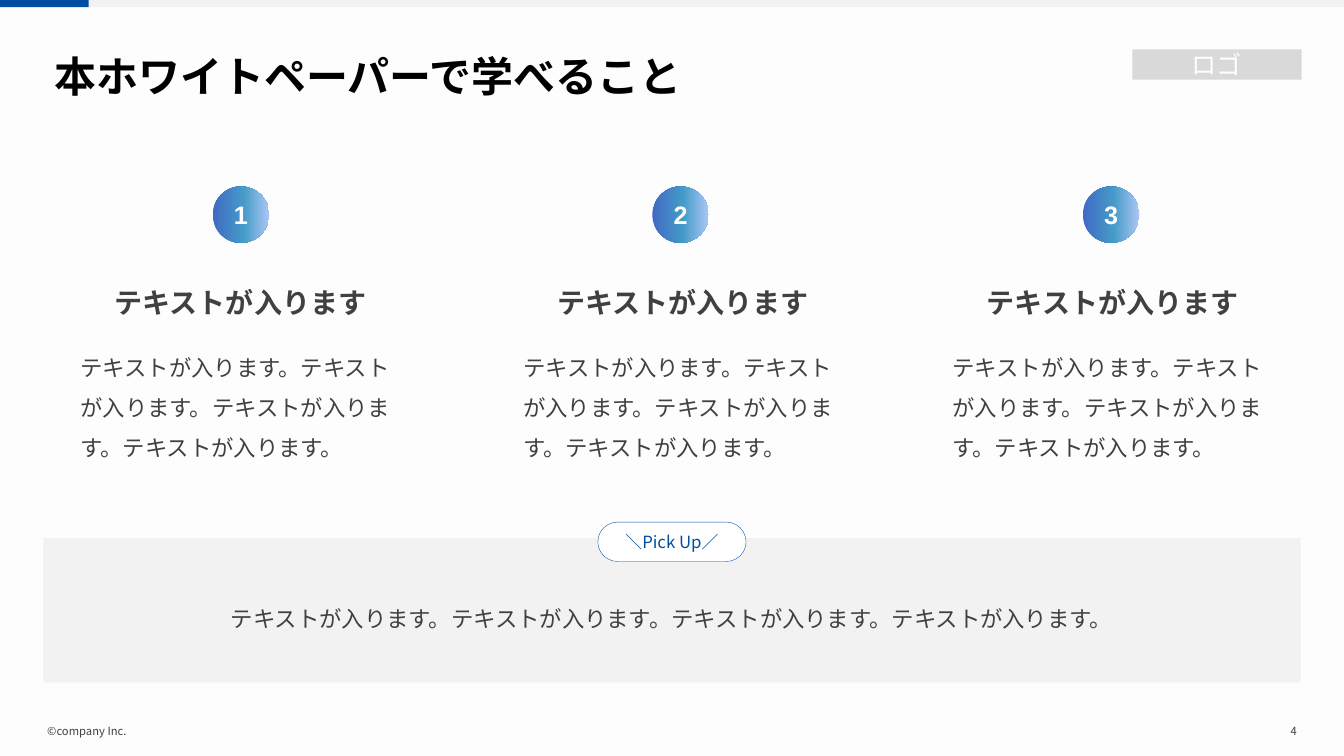
from dataclasses import dataclass
from typing import Any

import lxml.etree
import pptx
import pptx.dml.color
import pptx.enum.shapes
import pptx.enum.text
import pptx.oxml.ns
import pptx.util

Inches = pptx.util.Inches
Shape = pptx.enum.shapes.MSO_SHAPE
Align = pptx.enum.text.PP_ALIGN
Anchor = pptx.enum.text.MSO_ANCHOR
AutoSize = pptx.enum.text.MSO_AUTO_SIZE
qn = pptx.oxml.ns.qn

COLORS = {
    "white": "FFFFFF",
    "veil": "ECECEC",
    "panel": "F2F2F2",
    "logo": "D9D9D9",
    "accent": "004EA2",
    "text": "404040",
    "title": "000000",
}
BADGE_GRADIENT = {0: "406AC4", 55: "459BC8", 100: "ABC6F5"}
JAPANESE_FONT = "Noto Sans CJK JP"
SENTENCE = "テキストが入ります。"


@dataclass(frozen=True)
class Box:
    left: float
    top: float
    width: float
    height: float

    def lengths(self) -> list[int]:
        return [Inches(v) for v in (self.left, self.top, self.width, self.height)]


@dataclass(frozen=True)
class TextStyle:
    size: float
    color: str = "text"
    bold: bool = False
    font: str = JAPANESE_FONT
    align: Any = Align.LEFT
    anchor: Any = Anchor.TOP
    spacing: float = 1.0
    auto_size: Any = AutoSize.NONE


@dataclass(frozen=True)
class Lesson:
    number: str
    badge_left: float
    text_left: float
    heading: str = "テキストが入ります"
    body: str = SENTENCE * 4


TITLE = TextStyle(30, "title", True, anchor=Anchor.MIDDLE, spacing=0.9)
FOOTER = TextStyle(8, anchor=Anchor.MIDDLE)
PAGE_NUMBER = TextStyle(8, align=Align.RIGHT, anchor=Anchor.MIDDLE)
LOGO = TextStyle(18, "white", align=Align.CENTER, anchor=Anchor.MIDDLE)
BADGE = TextStyle(18, "white", True, "Arial", Align.CENTER, Anchor.MIDDLE)
HEADING = TextStyle(20, bold=True, align=Align.CENTER, auto_size=AutoSize.SHAPE_TO_FIT_TEXT)
BODY = TextStyle(16, spacing=1.5, auto_size=AutoSize.SHAPE_TO_FIT_TEXT)
SUMMARY = TextStyle(16, align=Align.CENTER, spacing=1.5, auto_size=AutoSize.SHAPE_TO_FIT_TEXT)
PICK_UP = TextStyle(12, "accent", align=Align.CENTER, anchor=Anchor.MIDDLE)

LESSONS = [Lesson("1", 2.11, 0.7), Lesson("2", 6.47, 5.09), Lesson("3", 10.74, 9.35)]


def rgb(name: str) -> pptx.dml.color.RGBColor:
    return pptx.dml.color.RGBColor.from_string(COLORS[name])


def set_attributes(target: Any, values: dict[str, Any]) -> None:
    for attribute, value in values.items():
        setattr(target, attribute, value)


def write(shape: Any, text: str, style: TextStyle) -> None:
    frame = shape.text_frame
    set_attributes(frame, {
        "word_wrap": True,
        "auto_size": style.auto_size,
        "vertical_anchor": style.anchor,
    })
    paragraph = frame.paragraphs[0]
    set_attributes(paragraph, {"alignment": style.align, "line_spacing": style.spacing})
    run = paragraph.add_run()
    run.text = text
    set_attributes(run.font, {
        "name": style.font,
        "size": pptx.util.Pt(style.size),
        "bold": style.bold,
    })
    run.font.color.rgb = rgb(style.color)
    east_asian = lxml.etree.Element(qn("a:ea"), typeface=style.font)
    run.font._element.find(qn("a:latin")).addnext(east_asian)


def add_text(slide: Any, box: Box, text: str, style: TextStyle) -> None:
    write(slide.shapes.add_textbox(*box.lengths()), text, style)


def add_filled(slide: Any, box: Box, fill: str, kind: Any = Shape.RECTANGLE) -> Any:
    shape = slide.shapes.add_shape(kind, *box.lengths())
    shape.shadow.inherit = False
    shape.fill.solid()
    shape.fill.fore_color.rgb = rgb(fill)
    shape.line.fill.background()
    return shape


def add_veil(slide: Any) -> None:
    """Tint the page below the top bar with a mostly transparent grey."""
    veil = add_filled(slide, Box(0, 0.08, 13.33, 7.42), "veil")
    color = veil._element.spPr.find(qn("a:solidFill")).find(qn("a:srgbClr"))
    lxml.etree.SubElement(color, qn("a:alpha"), val="10000")


def add_badge(slide: Any, lesson: Lesson) -> None:
    badge = add_filled(slide, Box(lesson.badge_left, 1.85, 0.56, 0.56), "accent", Shape.OVAL)
    badge.fill.gradient()
    badge.fill.gradient_angle = 0
    stops = badge._element.spPr.find(qn("a:gradFill")).find(qn("a:gsLst"))
    for default_stop in list(stops):
        stops.remove(default_stop)
    for percent, color in BADGE_GRADIENT.items():
        stop = lxml.etree.SubElement(stops, qn("a:gs"), pos=str(percent * 1000))
        lxml.etree.SubElement(stop, qn("a:srgbClr"), val=color)
    write(badge, lesson.number, BADGE)


def add_lesson(slide: Any, lesson: Lesson) -> None:
    add_badge(slide, lesson)
    add_text(slide, Box(lesson.text_left, 2.78, 3.37, 0.44), lesson.heading, HEADING)
    add_text(slide, Box(lesson.text_left, 3.33, 3.37, 1.28), lesson.body, BODY)


def add_page_frame(slide: Any) -> None:
    add_veil(slide)
    add_text(slide, Box(12.39, 7.16, 0.57, 0.19), "4", PAGE_NUMBER)
    add_text(slide, Box(0.37, 7.16, 4.17, 0.19), "©company Inc.", FOOTER)
    add_filled(slide, Box(0, -0.01, 13.33, 0.08), "panel")
    add_filled(slide, Box(0, -0.01, 0.88, 0.08), "accent")
    write(add_filled(slide, Box(11.23, 0.49, 1.68, 0.3), "logo"), "ロゴ", LOGO)


def add_pick_up(slide: Any) -> None:
    add_filled(slide, Box(0.43, 5.34, 12.47, 1.43), "panel")
    add_text(slide, Box(0.43, 5.82, 12.47, 0.47), SENTENCE * 4, SUMMARY)
    label = add_filled(slide, Box(5.93, 5.18, 1.47, 0.39), "white", Shape.ROUNDED_RECTANGLE)
    label.adjustments[0] = 0.5
    label.line.color.rgb = rgb("accent")
    label.line.width = pptx.util.Pt(0.25)
    write(label, "＼Pick Up／", PICK_UP)


def main() -> None:
    presentation = pptx.Presentation()
    presentation.slide_width = Inches(13.33)
    presentation.slide_height = Inches(7.5)
    slide = presentation.slides.add_slide(presentation.slide_layouts[6])
    add_page_frame(slide)
    add_text(slide, Box(0.44, 0.45, 6.56, 0.67), "本ホワイトペーパーで学べること", TITLE)
    for lesson in LESSONS:
        add_lesson(slide, lesson)
    add_pick_up(slide)
    presentation.save("out.pptx")


if __name__ == "__main__":
    main()
